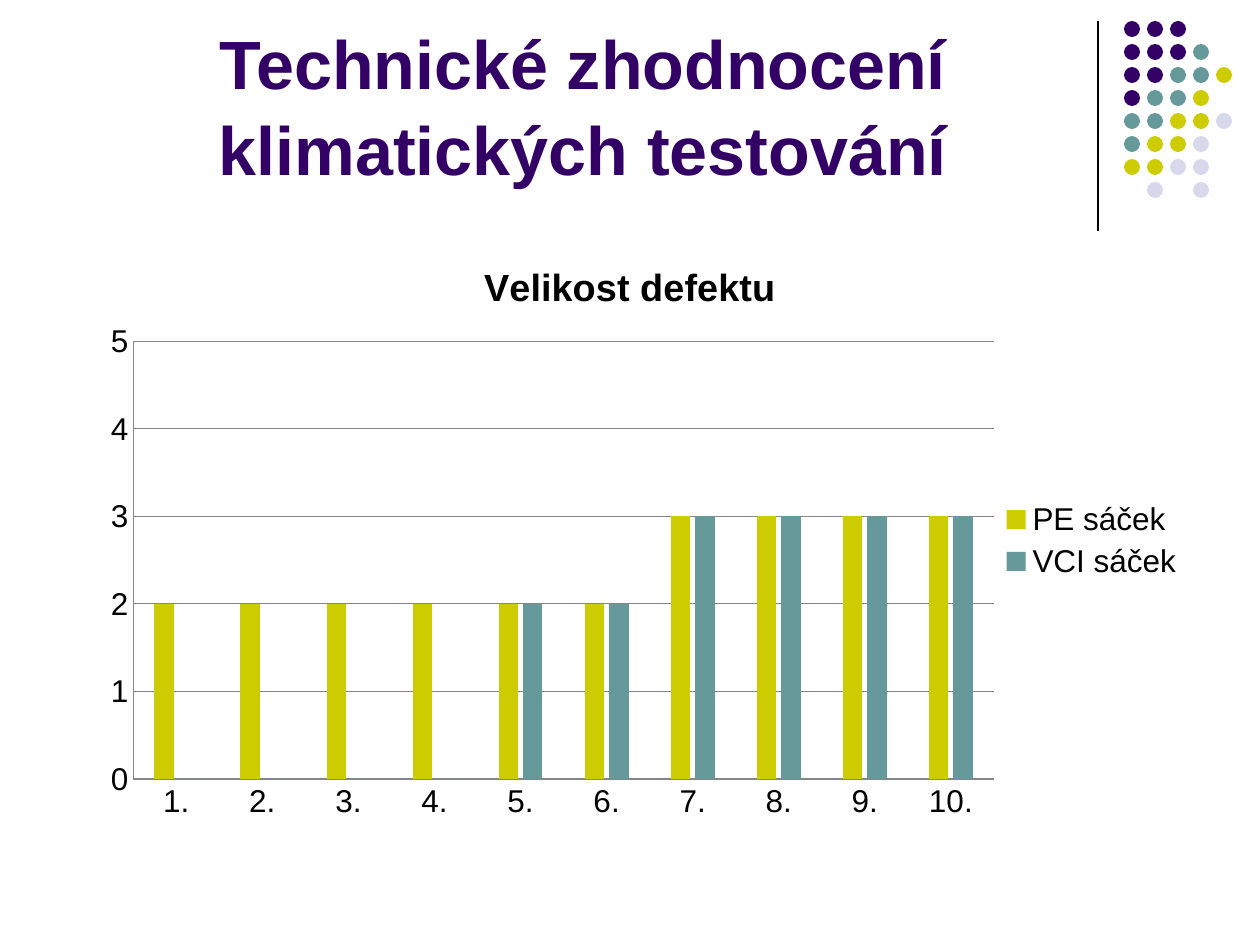
from lxml import etree
from pptx import Presentation
from pptx.chart.data import CategoryChartData
from pptx.dml.color import RGBColor
from pptx.enum.chart import XL_CHART_TYPE, XL_LEGEND_POSITION, XL_TICK_MARK
from pptx.enum.shapes import MSO_CONNECTOR, MSO_SHAPE
from pptx.enum.text import MSO_ANCHOR, MSO_AUTO_SIZE, PP_ALIGN
from pptx.oxml import parse_xml
from pptx.oxml.ns import nsdecls, qn
from pptx.util import Emu, Pt

COLUMNS = XL_CHART_TYPE.COLUMN_CLUSTERED
LEGEND_RIGHT = XL_LEGEND_POSITION.RIGHT
NO_TICK = XL_TICK_MARK.NONE
STRAIGHT = MSO_CONNECTOR.STRAIGHT
OVAL = MSO_SHAPE.OVAL
BOTTOM = MSO_ANCHOR.BOTTOM
NO_FIT = MSO_AUTO_SIZE.NONE
CENTER = PP_ALIGN.CENTER

FONT = "Arial"
PX_PER_INCH = 126
COLORS = {
    "purple": "330066",
    "teal": "669999",
    "lime": "CCCC00",
    "lilac": "D8D8EC",
    "black": "000000",
    "grid": "868686",
}
DOT_ROWS = ["PPP", "PPPT", "PPTTL", "PTTL", "TTLLV", "TLLV", "LLVV", " V V"]
DOT_COLORS = {"P": "purple", "T": "teal", "L": "lime", "V": "lilac"}
DEFECTS = {
    "PE sáček": ("lime", [2] * 6 + [3] * 4),
    "VCI sáček": ("teal", [0] * 4 + [2] * 2 + [3] * 4),
}
PLOT_AREA = {"x": 0.062, "y": 0.172, "w": 0.759, "h": 0.721}


def px(length):
    return Emu(round(length * 914400 / PX_PER_INCH))


def color(name):
    return RGBColor.from_string(COLORS[name])


def style_font(font, size, color_name, bold=False):
    font.name = FONT
    font.size = Pt(size)
    font.bold = bold
    font.color.rgb = color(color_name)


def add_ornament(slide, left, top, height):
    """Vertical rule with a grid of coloured dots to its right."""
    rule = slide.shapes.add_connector(
        STRAIGHT, px(left), px(top), px(left), px(top + height))
    rule.line.color.rgb = color("black")
    rule.line.width = Pt(0.75)
    etree.SubElement(rule._element.spPr, qn("a:effectLst"))

    indent, pitch, diameter = 26, 23, 16
    dots = slide.shapes.add_group_shape()
    for row, codes in enumerate(DOT_ROWS):
        for column, code in enumerate(codes):
            if code == " ":
                continue
            dot = dots.shapes.add_shape(
                OVAL, px(left + indent + column * pitch), px(top + row * pitch),
                px(diameter), px(diameter))
            dot.shadow.inherit = False
            dot.fill.solid()
            dot.fill.fore_color.rgb = color(DOT_COLORS[code])
            dot.line.fill.background()


def set_title(slide, left, top, width, height):
    title = slide.shapes.title
    title.left, title.top = px(left), px(top)
    title.width, title.height = px(width), px(height)
    frame = title.text_frame
    frame.text = "Technické zhodnocení klimatických testování"
    frame.word_wrap = True
    frame.auto_size = NO_FIT
    frame.vertical_anchor = BOTTOM
    heading = frame.paragraphs[0]
    heading.alignment = CENTER
    heading.line_spacing = 1.04
    style_font(heading.font, 39, "purple", bold=True)


def fix_plot_area(chart):
    """Pin the inner plot area to fractions of the chart."""
    plot_area = chart._chartSpace.chart.plotArea
    for layout in plot_area.findall(qn("c:layout")):
        plot_area.remove(layout)
    sizes = "".join(f'<c:{key} val="{value}"/>' for key, value in PLOT_AREA.items())
    plot_area.insert(0, parse_xml(
        f'<c:layout {nsdecls("c")}><c:manualLayout><c:layoutTarget val="inner"/>'
        f'<c:xMode val="edge"/><c:yMode val="edge"/>{sizes}'
        '</c:manualLayout></c:layout>'))


def add_defect_chart(slide, left, top, width, height):
    chart_data = CategoryChartData()
    chart_data.categories = [f"{number}." for number in range(1, 11)]
    for name, (_, sizes) in DEFECTS.items():
        chart_data.add_series(name, sizes)
    chart = slide.shapes.add_chart(
        COLUMNS, px(left), px(top), px(width), px(height), chart_data).chart
    style_font(chart.font, 18, "black")

    chart.has_title = True
    caption = chart.chart_title.text_frame
    caption.text = "Velikost defektu"
    style_font(caption.paragraphs[0].font, 21.6, "black", bold=True)
    chart.chart_title.include_in_layout = False

    chart.has_legend = True
    chart.legend.position = LEGEND_RIGHT
    chart.legend.include_in_layout = False

    bars = chart.plots[0]
    bars.gap_width = 219
    bars.overlap = -27
    bars.vary_by_categories = False
    for series, (fill, _) in zip(bars.series, DEFECTS.values()):
        series.format.fill.solid()
        series.format.fill.fore_color.rgb = color(fill)

    scale = chart.value_axis
    scale.minimum_scale, scale.maximum_scale, scale.major_unit = 0, 5, 1
    scale.has_major_gridlines = True
    for axis in (scale, chart.category_axis):
        axis.major_tick_mark = axis.minor_tick_mark = NO_TICK
    for part in (scale, chart.category_axis, scale.major_gridlines):
        part.format.line.color.rgb = color("grid")
        part.format.line.width = Pt(0.75)
    fix_plot_area(chart)


def main():
    deck = Presentation()
    deck.slide_width, deck.slide_height = px(1260), px(945)
    slide = deck.slides.add_slide(deck.slide_layouts[5])
    add_ornament(slide, 1098, 21, 210)
    set_title(slide, 63, 16, 1040, 179)
    add_defect_chart(slide, 63, 237, 1134, 607)
    deck.save("out.pptx")


if __name__ == "__main__":
    main()
